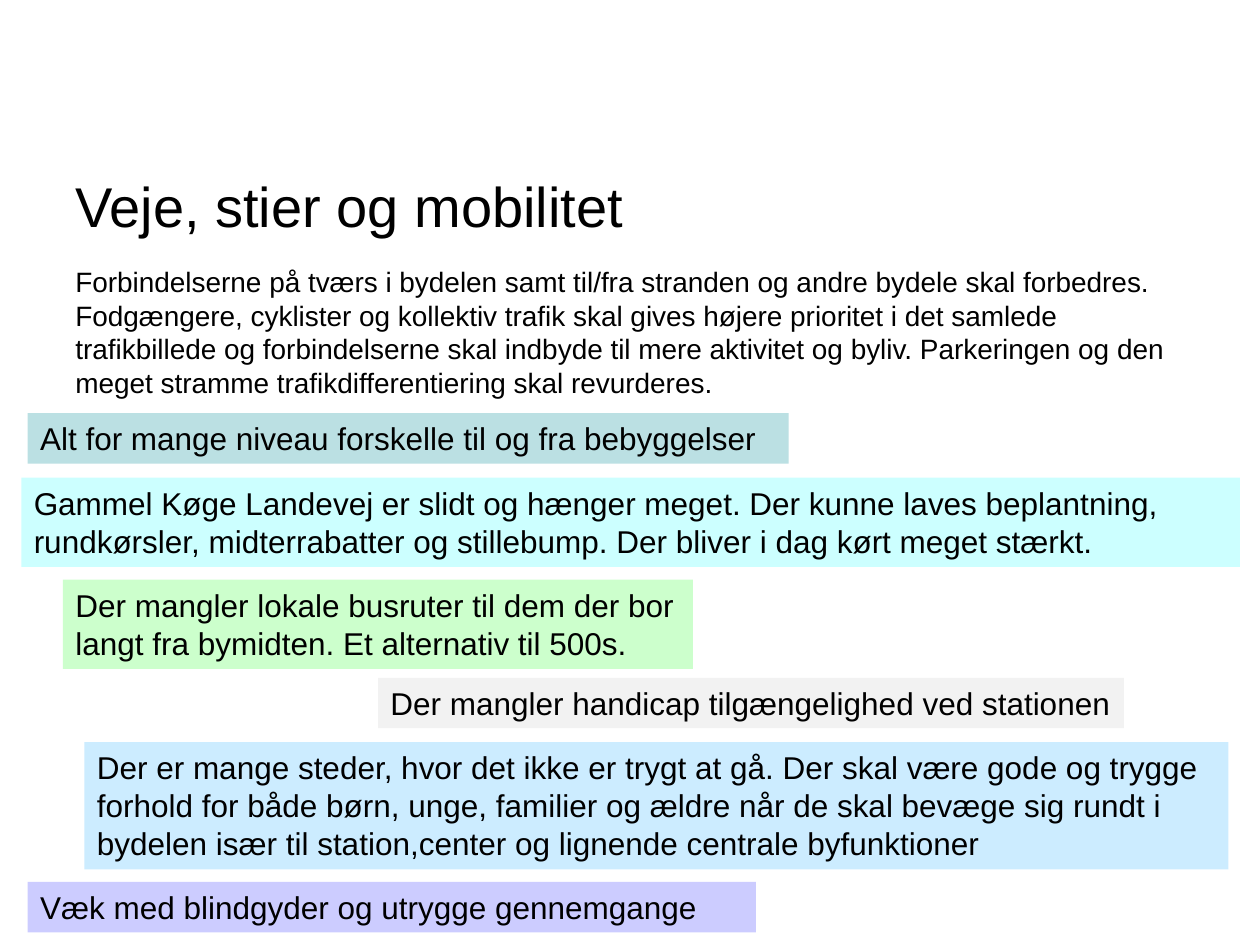
"""Build the slide on roads, paths and mobility with its coloured citizen comments."""
from pptx import Presentation, util as u
from pptx.dml.color import RGBColor
from pptx.enum import shapes, text

COLOURS = {
    "ink": "000000", "teal": "BBE0E3", "cyan": "CCFFFF", "green": "CCFFCC",
    "grey": "F2F2F2", "blue": "CCECFF", "violet": "CCCCFF",
}

COMMENTS = [
    ("teal", 22, 328, 604, 40, "Alt for mange niveau forskelle til og fra bebyggelser"),
    ("cyan", 17, 379, 967, 71,
     "Gammel Køge Landevej er slidt og hænger meget. Der kunne laves beplantning, "
     "rundkørsler, midterrabatter og stillebump. Der bliver i dag kørt meget stærkt."),
    ("green", 50, 460, 500, 71,
     "Der mangler lokale busruter til dem der bor langt fra bymidten. "
     "Et alternativ til 500s."),
    ("grey", 300, 538, 592, 40, "Der mangler handicap tilgængelighed ved stationen"),
    ("blue", 67, 589, 908, 101,
     "Der er mange steder, hvor det ikke er trygt at gå. Der skal være gode og trygge "
     "forhold for både børn, unge, familier og ældre når de skal bevæge sig rundt i "
     "bydelen især til station,center og lignende centrale byfunktioner"),
    ("violet", 22, 700, 578, 40, "Væk med blindgyder og utrygge gennemgange"),
]


class SlideBuilder:
    """Hold the style and the current slide."""

    scale = 9144
    font = "Arial"

    def __init__(self, deck):
        self.slide = deck.slides.add_slide(deck.slide_layouts[6])

    def px(self, *lengths):
        return [u.Emu(length * self.scale) for length in lengths]

    def set_words(self, box, words, size, anchor):
        frame = box.text_frame
        frame.text = words
        frame.word_wrap = True
        frame.vertical_anchor = anchor
        para = frame.paragraphs[0]
        para.alignment = text.PP_ALIGN.LEFT
        for span in para.runs:
            span.font.name = self.font
            span.font.size = u.Pt(size)
            span.font.color.rgb = RGBColor.from_string(COLOURS["ink"])

    def label(self, words, size, left, top, width, height, anchor=text.MSO_ANCHOR.TOP):
        box = self.slide.shapes.add_textbox(*self.px(left, top, width, height))
        self.set_words(box, words, size, anchor)

    def comment(self, colour, left, top, width, height, words):
        box = self.slide.shapes.add_shape(
            shapes.MSO_SHAPE.RECTANGLE, *self.px(left, top, width, height))
        box.shadow.inherit = False
        box.fill.solid()
        box.fill.fore_color.rgb = RGBColor.from_string(COLOURS[colour])
        box.line.fill.background()
        self.set_words(box, words, 18, text.MSO_ANCHOR.TOP)
        box.text_frame.auto_size = text.MSO_AUTO_SIZE.SHAPE_TO_FIT_TEXT


def main():
    deck = Presentation()
    deck.slide_width, deck.slide_height = u.Inches(10), u.Inches(7.5)
    builder = SlideBuilder(deck)
    builder.label("Veje, stier og mobilitet", 32, 50, 123, 900, 79, text.MSO_ANCHOR.MIDDLE)
    builder.label(
        "Forbindelserne på tværs i bydelen samt til/fra stranden og andre bydele skal "
        "forbedres. Fodgængere, cyklister og kollektiv trafik skal gives højere prioritet "
        "i det samlede trafikbillede og forbindelserne skal indbyde til mere aktivitet og "
        "byliv. Parkeringen og den meget stramme trafikdifferentiering skal revurderes.",
        16, 50, 205, 900, 205)
    for comment in COMMENTS:
        builder.comment(*comment)
    deck.save("out.pptx")


if __name__ == "__main__":
    main()
